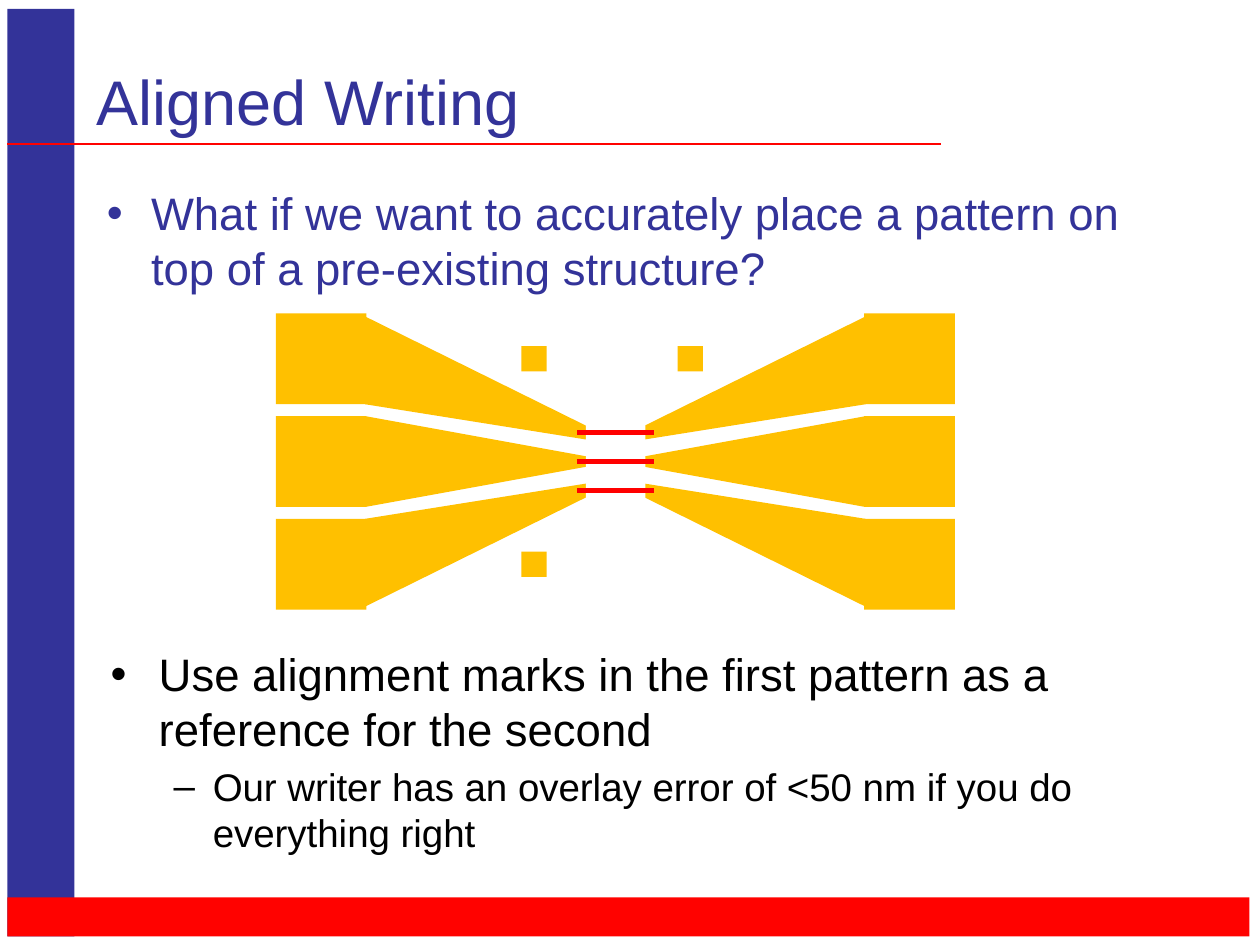
from dataclasses import dataclass

from lxml import etree
from pptx import Presentation
from pptx.dml.color import RGBColor
from pptx.enum import shapes, text
from pptx.oxml import ns
from pptx.util import Cm, Pt


@dataclass(frozen=True)
class Theme:
    font: str = "Arial"
    blue: RGBColor = RGBColor(0x33, 0x33, 0x99)
    band_red: RGBColor = RGBColor(0xFF, 0x02, 0x00)
    wire_red: RGBColor = RGBColor(0xFF, 0x00, 0x00)
    gold: RGBColor = RGBColor(0xFF, 0xC0, 0x00)
    white: RGBColor = RGBColor(0xFF, 0xFF, 0xFF)
    black: RGBColor = RGBColor(0x00, 0x00, 0x00)
    title_size: Pt = Pt(36)
    point_size: Pt = Pt(26)
    detail_size: Pt = Pt(22)


@dataclass(frozen=True)
class Box:
    left: float
    top: float
    width: float
    height: float


THEME = Theme()
PRESET = shapes.MSO_SHAPE


def paint(shape, color):
    shape.shadow.inherit = False
    shape.fill.solid()
    shape.fill.fore_color.rgb = color
    shape.line.fill.background()


def add_block(parent, box, color, preset=PRESET.RECTANGLE):
    block = parent.shapes.add_shape(
        preset, Cm(box.left), Cm(box.top), Cm(box.width), Cm(box.height))
    paint(block, color)
    return block


def add_rule(slide, left, right, y, color, weight):
    rule = slide.shapes.add_connector(
        shapes.MSO_CONNECTOR.STRAIGHT, Cm(left), Cm(y), Cm(right), Cm(y))
    rule.line.color.rgb = color
    rule.line.width = Pt(weight)
    etree.SubElement(rule._element.spPr, ns.qn("a:effectLst"))


def place(holder, box):
    holder.left, holder.top = Cm(box.left), Cm(box.top)
    holder.width, holder.height = Cm(box.width), Cm(box.height)
    frame = holder.text_frame
    frame.word_wrap = True
    frame.auto_size = text.MSO_AUTO_SIZE.NONE
    return frame


def style(paragraph, size, color):
    paragraph.font.name = THEME.font
    paragraph.font.size = size
    paragraph.font.color.rgb = color


def write_bullet(paragraph, wording, mark, margin, hanging, size, color):
    paragraph.text = wording
    properties = paragraph._p.get_or_add_pPr()
    properties.set("marL", str(Cm(margin)))
    properties.set("indent", str(-Cm(hanging)))
    etree.SubElement(properties, ns.qn("a:buFont"), typeface=THEME.font)
    etree.SubElement(properties, ns.qn("a:buChar"), char=mark)
    style(paragraph, size, color)


def add_frame(slide, box):
    add_block(slide, Box(box.left, box.top, 1.35, box.height), THEME.blue)
    band = 0.79
    add_block(slide, Box(box.left, box.top + box.height - band, box.width, band),
              THEME.band_red)
    add_rule(slide, box.left, box.left + 18.82, box.top + 2.72, THEME.band_red, 1)


def add_title(slide, box):
    frame = place(slide.shapes.title, box)
    frame.vertical_anchor = text.MSO_ANCHOR.MIDDLE
    heading = frame.paragraphs[0]
    heading.text = "Aligned Writing"
    heading.alignment = text.PP_ALIGN.LEFT
    style(heading, THEME.title_size, THEME.blue)


def add_question(slide, box):
    question = place(slide.placeholders[1], box).paragraphs[0]
    question.space_before = Pt(0)
    write_bullet(
        question,
        "What if we want to accurately place a pattern on top of a pre-existing structure?",
        "•", 0.89, 0.89, THEME.point_size, THEME.blue)


def add_electrodes(slide, box, mirrored):
    half = slide.shapes.add_group_shape()
    pad, pitch = 1.83, 2.07

    def across(x):
        return box.left + (box.width - x if mirrored else x)

    pad_left = across(pad if mirrored else 0)
    for row in range(3):
        add_block(half, Box(pad_left, box.top + row * pitch, pad, pad), THEME.gold)

    taper = [(1.8, 1.83), (6.25, 2.54), (6.25, 2.26), (1.78, 0.05)]
    for flipped in (False, True):
        outline = [(Cm(across(x)), Cm(box.top + (box.height - y if flipped else y)))
                   for x, y in taper]
        builder = half.shapes.build_freeform(*outline[0])
        builder.add_line_segments(outline[1:], close=True)
        paint(builder.convert_to_shape(), THEME.gold)

    length = 5.03
    middle = Box(across(4.32) - pad / 2, box.top + (box.height - length) / 2, pad, length)
    tip = add_block(half, middle, THEME.gold, PRESET.ISOSCELES_TRIANGLE)
    tip.rotation = 270 if mirrored else 90


def add_pattern(slide, box):
    for mirrored in (False, True):
        add_electrodes(slide, box, mirrored)

    center = box.top + box.height / 2
    add_block(slide, Box(box.left + 6.25, center - 0.91, 1.2, 1.83), THEME.white)
    for step in (-1, 0, 1):
        add_rule(slide, box.left + 6.08, box.left + 7.62, center + step * 0.59,
                 THEME.wire_red, 3)

    for x, y in [(4.95, 0.66), (8.1, 0.66), (4.95, 4.8)]:
        add_block(slide, Box(box.left + x, box.top + y, 0.51, 0.51), THEME.gold)


def add_answer(slide, box):
    frame = place(slide.shapes.add_textbox(0, 0, 0, 0), box)
    write_bullet(
        frame.paragraphs[0],
        "Use alignment marks in the first pattern as a reference for the second",
        "•", 0.97, 0.97, THEME.point_size, THEME.black)
    detail = frame.add_paragraph()
    detail.level = 1
    detail.space_before = Pt(4.4)
    write_bullet(
        detail, "Our writer has an overlay error of <50 nm if you do everything right",
        "–", 2.06, 0.79, THEME.detail_size, THEME.black)


def main():
    deck = Presentation()
    deck.slide_width, deck.slide_height = Cm(25.4), Cm(19.05)
    slide = deck.slides.add_slide(deck.slide_layouts[1])
    add_frame(slide, Box(0.15, 0.18, 25.04, 18.7))
    add_title(slide, Box(1.7, 1.07, 17.58, 1.9))
    add_question(slide, Box(1.9, 3.61, 21.59, 2.54))
    add_pattern(slide, Box(5.56, 6.32, 13.69, 5.97))
    add_answer(slide, Box(1.98, 12.9, 21.59, 2.54))
    deck.save("out.pptx")


if __name__ == "__main__":
    main()
